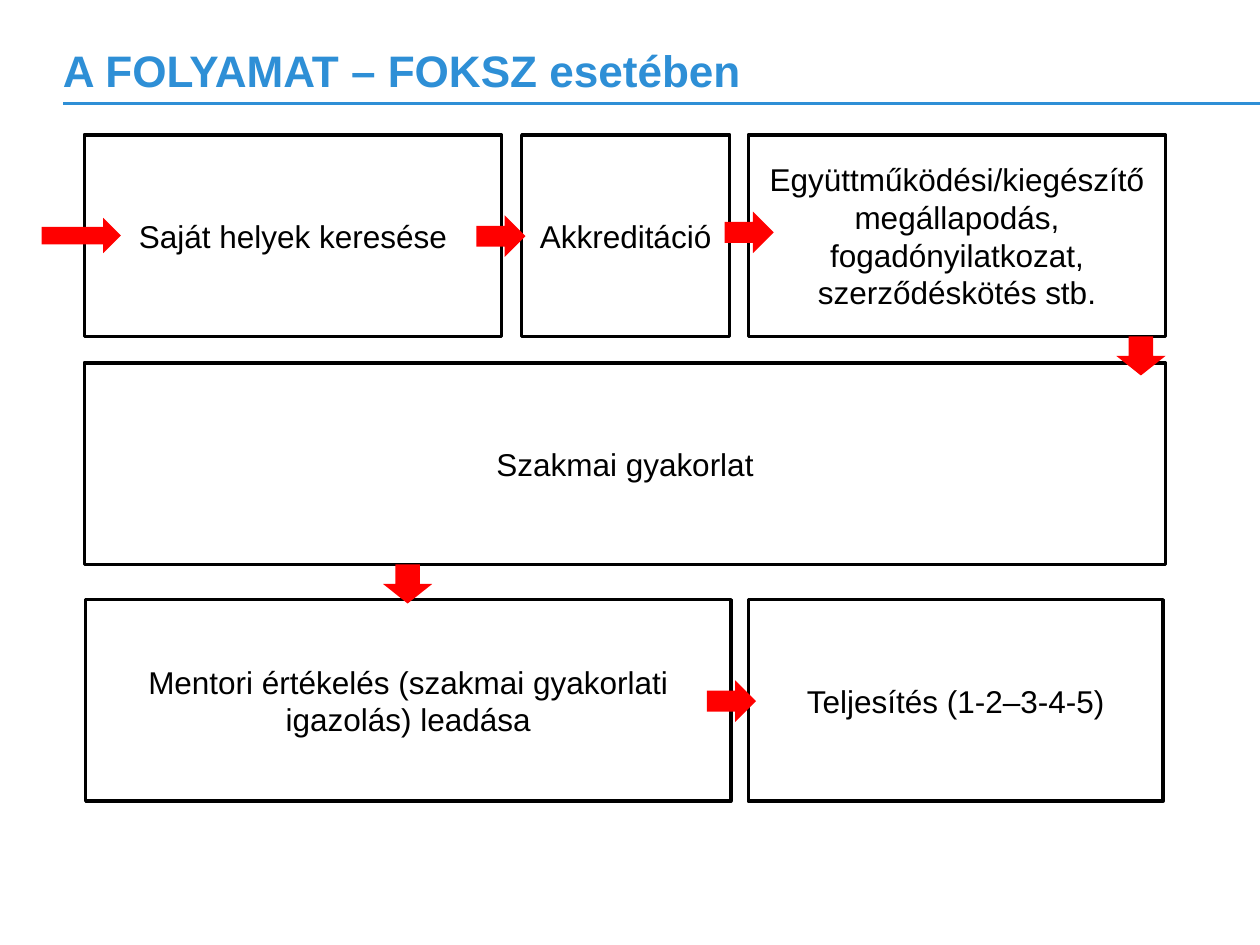
from dataclasses import dataclass

from lxml import etree
from pptx import Presentation
from pptx.dml.color import RGBColor
from pptx.enum import shapes, text
from pptx.oxml import ns
from pptx.util import Inches, Pt


@dataclass(frozen=True)
class Theme:
    """Colours, font and sizes of the slide."""
    font: str = "Arial"
    accent: RGBColor = RGBColor(0x2E, 0x8F, 0xD6)
    ink: RGBColor = RGBColor(0, 0, 0)
    paper: RGBColor = RGBColor(255, 255, 255)
    arrow: RGBColor = RGBColor(255, 0, 0)
    title: Pt = Pt(25.2)
    body: Pt = Pt(18)
    rule: Pt = Pt(1.5)
    border: Pt = Pt(2)


THEME = Theme()
RIGHT = shapes.MSO_SHAPE.RIGHT_ARROW
DOWN = shapes.MSO_SHAPE.DOWN_ARROW
STEP_HEIGHT = 1.6
ROWS = [
    (1.07, [(0.67, 3.31, "Saját helyek keresése"),
            (4.14, 1.65, "Akkreditáció"),
            (5.94, 3.31, "Együttműködési/kiegészítő megállapodás, "
                         "fogadónyilatkozat, szerződéskötés stb.")]),
    (2.88, [(0.67, 8.58, "Szakmai gyakorlat")]),
    (4.76, [(0.68, 5.12, "Mentori értékelés (szakmai gyakorlati igazolás) leadása"),
            (5.94, 3.29, "Teljesítés (1-2–3-4-5)")]),
]
ARROWS = [
    (RIGHT, (5.61, 5.4, 0.39, 0.33)),
    (RIGHT, (3.78, 1.71, 0.39, 0.33)),
    (RIGHT, (5.75, 1.68, 0.39, 0.33)),
    (RIGHT, (0.33, 1.73, 0.63, 0.28)),
    (DOWN, (8.86, 2.67, 0.39, 0.31)),
    (DOWN, (3.04, 4.48, 0.39, 0.31)),
]


def write(sp, words, size, color, align, bold=False):
    """Put one styled, vertically centred paragraph in a shape."""
    tf = sp.text_frame
    tf.word_wrap = True
    tf.vertical_anchor = text.MSO_ANCHOR.MIDDLE
    tf.text = words
    p = tf.paragraphs[0]
    p.alignment = align
    font = p.runs[0].font
    font.name, font.size, font.bold = THEME.font, size, bold
    font.color.rgb = color


def add_header(slide, box):
    """Add the title in the box and the rule that runs to the slide's edge."""
    left, top, width, height = box
    rule_y = Inches(top + height + 0.11)
    line = slide.shapes.add_connector(
        shapes.MSO_CONNECTOR.STRAIGHT, Inches(left), rule_y, Inches(10), rule_y)
    line.line.color.rgb = THEME.accent
    line.line.width = THEME.rule
    etree.SubElement(line._element.spPr, ns.qn("a:effectLst"))
    sp = slide.shapes.add_textbox(*map(Inches, box))
    tf = sp.text_frame
    tf.margin_left = tf.margin_top = tf.margin_right = tf.margin_bottom = 0
    write(sp, "A FOLYAMAT – FOKSZ esetében", THEME.title, THEME.accent,
          text.PP_ALIGN.LEFT, bold=True)


def add_step(slide, box, words):
    """Add one outlined process step in the box."""
    sp = slide.shapes.add_shape(shapes.MSO_SHAPE.RECTANGLE, *map(Inches, box))
    sp.shadow.inherit = False
    sp.fill.solid()
    sp.fill.fore_color.rgb = THEME.paper
    sp.line.color.rgb = THEME.ink
    sp.line.width = THEME.border
    write(sp, words, THEME.body, THEME.ink, text.PP_ALIGN.CENTER)


def add_arrow(slide, kind, box):
    """Add one block arrow in the box."""
    sp = slide.shapes.add_shape(kind, *map(Inches, box))
    sp.shadow.inherit = False
    sp.fill.solid()
    sp.fill.fore_color.rgb = THEME.arrow
    sp.line.fill.background()


def main():
    """Build and save the slide."""
    prs = Presentation()
    prs.slide_width, prs.slide_height = Inches(10), Inches(7.5)
    slide = prs.slides.add_slide(prs.slide_layouts[6])
    add_header(slide, (0.5, 0.4, 9, 0.31))
    for top, steps in ROWS:
        for left, width, words in steps:
            add_step(slide, (left, top, width, STEP_HEIGHT), words)
    for kind, box in ARROWS:
        add_arrow(slide, kind, box)
    prs.save("out.pptx")


if __name__ == "__main__":
    main()
